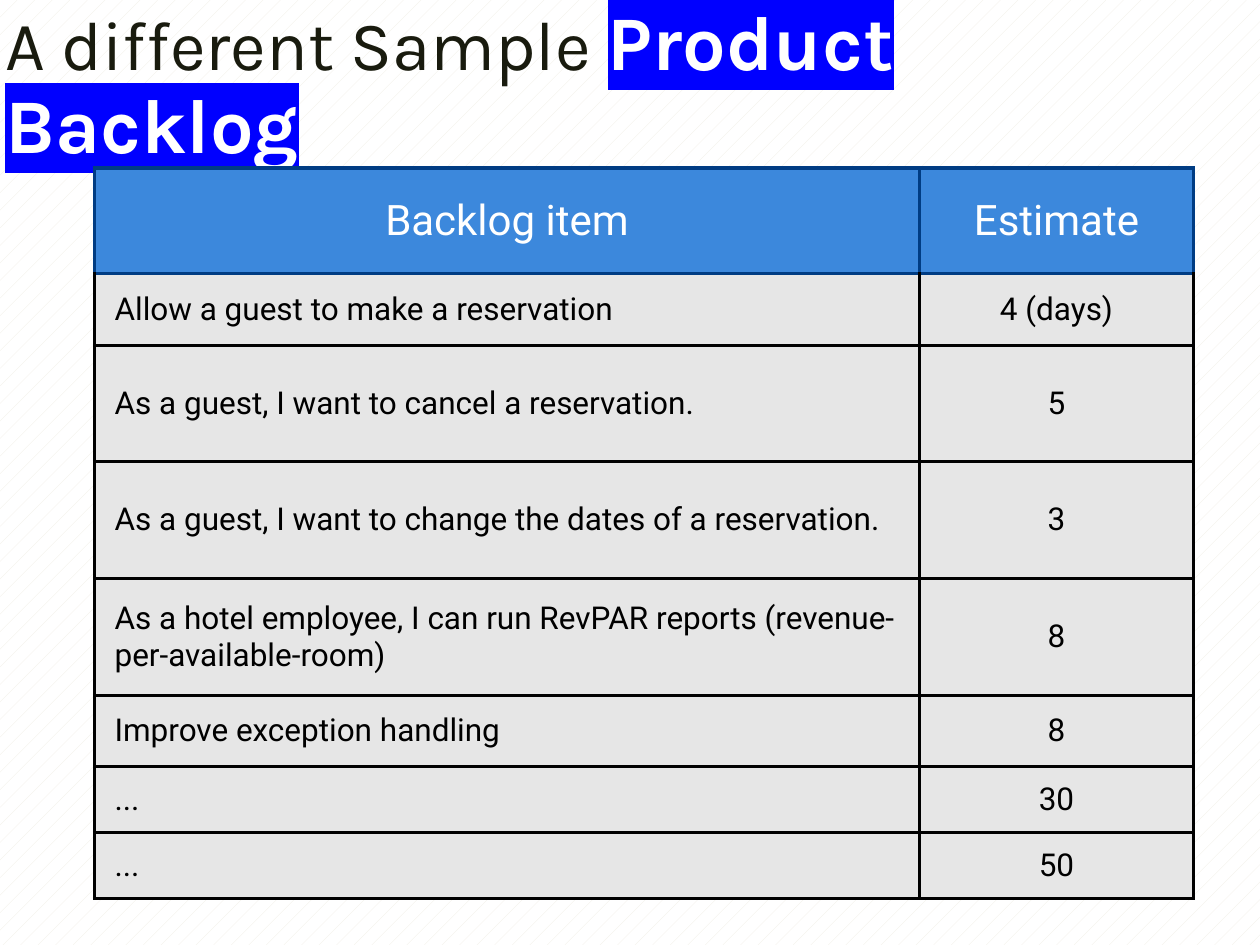
from lxml import etree
from pptx import Presentation
from pptx.dml.color import RGBColor
from pptx.enum import dml, text
from pptx.oxml import ns
from pptx.util import Pt

COLORS = {
    "paper": "FFFFFF", "hatch": "EFEDE3", "title": "191B0E", "white": "FFFFFF",
    "highlight": "0000FF", "header": "3C88DC", "header_line": "003C83",
    "body": "E6E6E6", "line": "000000", "text": "000000",
}
MARGINS = dict.fromkeys(
    ("margin_left", "margin_top", "margin_right", "margin_bottom"), Pt(2.9))
HEADER = ("Backlog item", "Estimate")
ITEMS = [
    ("Allow a guest to make a reservation", "4 (days)"),
    ("As a guest, I want to cancel a reservation.", "5"),
    ("As a guest, I want to change the dates of a reservation.", "3"),
    ("As a hotel employee, I can run RevPAR reports "
     "(revenue-per-available-room)", "8"),
    ("Improve exception handling", "8"),
    ("...", "30"),
    ("...", "50"),
]
COL_WIDTHS = (471.5, 156.5)
ROW_HEIGHTS = (60.5, 41, 66, 67, 67, 40.5, 38, 37.5)


def rgb(name):
    return RGBColor.from_string(COLORS[name])


def set_all(obj, values):
    for name, value in values.items():
        setattr(obj, name, value)


def add_run(p, words, color, **font):
    r = p.add_run()
    r.text = words
    set_all(r.font, font)
    r.font.color.rgb = rgb(color)
    return r


def add_highlight(r, color):
    mark = etree.Element(ns.qn("a:highlight"))
    etree.SubElement(mark, ns.qn("a:srgbClr"), val=COLORS[color])
    r.font._element.find(ns.qn("a:solidFill")).addnext(mark)


def set_borders(cell, **sides):
    """Draw 2 pt cell borders; sides are L, R, T and B."""
    tcPr = cell._tc.get_or_add_tcPr()
    for i, side in enumerate("LRTB"):
        ln = etree.Element(ns.qn(f"a:ln{side}"), w=str(Pt(2)))
        fill = etree.SubElement(ln, ns.qn("a:solidFill"))
        etree.SubElement(fill, ns.qn("a:srgbClr"), val=COLORS[sides[side]])
        tcPr.insert(i, ln)


def add_title(slide, left, top, width, height):
    tf = slide.shapes.add_textbox(left, top, width, height).text_frame
    set_all(tf, {**MARGINS, "word_wrap": True,
                 "vertical_anchor": text.MSO_ANCHOR.TOP})
    p = tf.paragraphs[0]
    p.line_spacing = 0.89
    add_run(p, "A different Sample ", "title", name="Karla", size=Pt(39.6))
    r = add_run(p, "Product Backlog", "white", name="Karla", size=Pt(44.1),
                bold=True)
    add_highlight(r, "highlight")


def fill_cell(cell, words, is_header, is_item, top_line):
    line = "header_line" if is_header else "line"
    set_all(cell, {**MARGINS, "vertical_anchor": text.MSO_ANCHOR.MIDDLE})
    cell.fill.solid()
    cell.fill.fore_color.rgb = rgb("header" if is_header else "body")
    set_borders(cell, L=line, R=line, T=top_line, B=line)
    p = cell.text_frame.paragraphs[0]
    if is_item and not is_header:
        p._p.get_or_add_pPr().set("marL", str(Pt(8.6)))
    else:
        p.alignment = text.PP_ALIGN.CENTER
    add_run(p, words, "white" if is_header else "text", name="Roboto",
            size=Pt(24 if is_header else 18))


def add_backlog(slide, left, top, width, height):
    rows = [HEADER, *ITEMS]
    table = slide.shapes.add_table(
        len(rows), len(HEADER), left, top, width, height).table
    # Column and row sizes
    for col, size in zip(table.columns, COL_WIDTHS):
        col.width = Pt(size)
    for row, size in zip(table.rows, ROW_HEIGHTS):
        row.height = Pt(size)
    # Header row, then one row per backlog item
    for i, row in enumerate(rows):
        for j, words in enumerate(row):
            fill_cell(table.cell(i, j), words, i == 0, j == 0,
                      "header_line" if i < 2 else "line")


def main():
    prs = Presentation()
    set_all(prs, {"slide_width": Pt(720), "slide_height": Pt(540)})
    slide = prs.slides.add_slide(prs.slide_layouts[6])

    # Patterned background
    fill = slide.background.fill
    fill.patterned()
    fill.pattern = dml.MSO_PATTERN.PERCENT_5
    fill.fore_color.rgb = rgb("hatch")
    fill.back_color.rgb = rgb("paper")

    add_title(slide, Pt(0), Pt(0), Pt(648), Pt(90))
    add_backlog(slide, Pt(54), Pt(96), Pt(sum(COL_WIDTHS)),
                Pt(sum(ROW_HEIGHTS)))
    prs.save("out.pptx")


if __name__ == "__main__":
    main()
